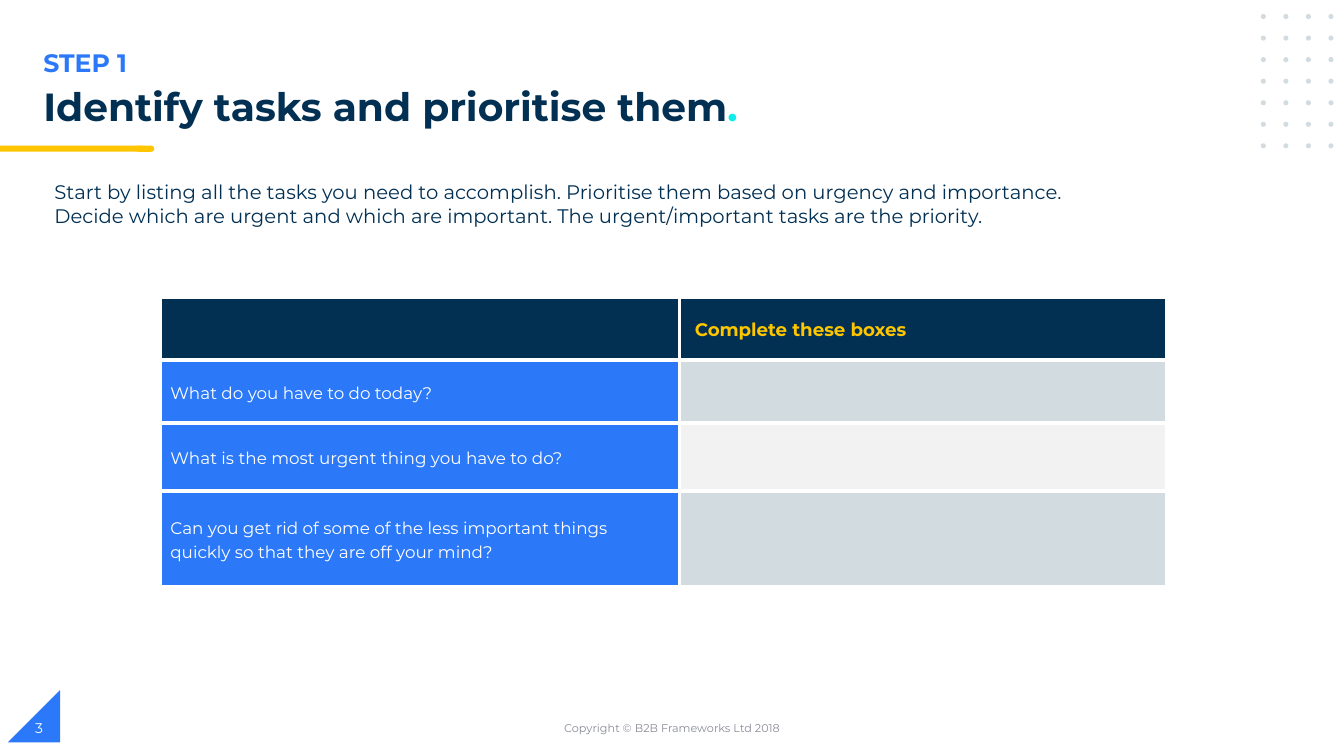
from itertools import product

from lxml import etree
from pptx import Presentation
from pptx import util as u
from pptx.dml.color import RGBColor
from pptx.enum import shapes, text
from pptx.oxml import ns

HUES = {
    "navy": "023053", "blue": "2B79F8", "gold": "FFC600", "cyan": "0EECEC",
    "mist": "D1DBE0", "pale": "F2F2F2", "gray": "888C97", "white": "FFFFFF",
}
KIND = shapes.MSO_SHAPE
TOP, MID = text.MSO_ANCHOR.TOP, text.MSO_ANCHOR.MIDDLE
LEFT, MIDST = text.PP_ALIGN.LEFT, text.PP_ALIGN.CENTER


def hue(name):
    return RGBColor.from_string(HUES[name])


class Page:
    """Holds the slide and its style; all lengths are in points."""

    face = "Montserrat"

    def __init__(self, slide):
        self.slide = slide

    def shape(self, kind, x, y, w, h, fill):
        item = self.slide.shapes.add_shape(kind, *map(u.Pt, (x, y, w, h)))
        item.shadow.inherit = False
        item.fill.solid()
        item.fill.fore_color.rgb = hue(fill)
        item.line.fill.background()
        return item

    def words(self, frame, runs, size, bold=False, align=LEFT, space=None):
        """Fill the first paragraph with (words, colour) runs."""
        para = frame.paragraphs[0]
        para.alignment = align
        if space:
            para.line_spacing = space
        for words, color in runs:
            run = para.add_run()
            run.text = words
            run.font.name = self.face
            run.font.size = u.Pt(size)
            run.font.bold = bold
            run.font.color.rgb = hue(color)

    def setup(self, frame, anchor):
        frame.word_wrap = True
        frame.auto_size = text.MSO_AUTO_SIZE.NONE
        frame.vertical_anchor = anchor

    def label(self, x, y, w, h, words, size, color, bold=False,
              align=LEFT, anchor=TOP):
        box = self.slide.shapes.add_textbox(*map(u.Pt, (x, y, w, h)))
        self.setup(box.text_frame, anchor)
        self.words(box.text_frame, [(words, color)], size, bold, align)

    def title(self, x, y, w, h, runs, size):
        item = self.slide.shapes.title
        item.left, item.top, item.width, item.height = map(u.Pt, (x, y, w, h))
        self.setup(item.text_frame, TOP)
        self.words(item.text_frame, runs, size, True, space=0.9)

    def border(self, cell, color, width):
        props = cell._tc.get_or_add_tcPr()
        for side in ("lnL", "lnR", "lnT", "lnB"):
            line = etree.SubElement(props, ns.qn("a:" + side), w=str(u.Pt(width)))
            fill = etree.SubElement(line, ns.qn("a:solidFill"))
            etree.SubElement(fill, ns.qn("a:srgbClr"), val=HUES[color])

    def cell(self, cell, fill, words="", color="white", size=12,
             bold=False, inset=7.2):
        self.border(cell, "white", 3)
        cell.fill.solid()
        cell.fill.fore_color.rgb = hue(fill)
        cell.vertical_anchor = MID
        cell.margin_left, cell.margin_right = u.Pt(inset), u.Pt(7.2)
        cell.margin_top = cell.margin_bottom = 0
        if words:
            self.words(cell.text_frame, [(words, color)], size, bold, space=1.15)

    def table(self, x, y, cols, rows):
        frame = self.slide.shapes.add_table(
            len(rows), len(cols), *map(u.Pt, (x, y, sum(cols), sum(rows))))
        grid = frame.table
        for col, width in zip(grid.columns, cols):
            col.width = u.Pt(width)
        for row, height in zip(grid.rows, rows):
            row.height = u.Pt(height)
        return grid


def main():
    deck = Presentation()
    deck.slide_width, deck.slide_height = u.Pt(960), u.Pt(540)
    page = Page(deck.slides.add_slide(deck.slide_layouts[5]))

    corner = page.shape(KIND.RIGHT_TRIANGLE, 5.6, 493, 37.3, 37.3, "blue")
    corner._element.spPr.xfrm.set("flipH", "1")
    page.shape(KIND.FLOWCHART_TERMINATOR, 96.5, 104, 13.7, 4.4, "gold")
    page.shape(KIND.RECTANGLE, 0, 104, 101.5, 4.4, "gold")
    for row, col in product(range(7), range(4)):
        page.shape(KIND.OVAL, 900.6 + 16.1 * col, 10 + 15.4 * row, 3.6, 3.6, "mist")

    page.label(23.8, 30.2, 481.7, 28.8, "STEP 1", 18, "blue", bold=True)
    page.title(23.8, 59, 808.6, 28.8,
               [("Identify tasks and prioritise them", "navy"), (".", "cyan")], 28)
    page.label(31.7, 125.3, 752.4, 41,
               "Start by listing all the tasks you need to accomplish. "
               "Prioritise them based on urgency and importance. "
               "Decide which are urgent and which are important. "
               "The urgent/important tasks are the priority.", 14, "navy")

    asks = [
        ("What do you have to do today?", "mist"),
        ("What is the most urgent thing you have to do?", "pale"),
        ("Can you get rid of some of the less important things quickly "
         "so that they are off your mind?", "mist"),
    ]
    grid = page.table(114.5, 212, (370.8, 348.5), (45.2, 45.2, 48.2, 68.4))
    page.cell(grid.cell(0, 0), "navy")
    page.cell(grid.cell(0, 1), "navy", "Complete these boxes", "gold", 13, True, 11)
    for row, (ask, tint) in enumerate(asks, 1):
        page.cell(grid.cell(row, 0), "blue", ask)
        page.cell(grid.cell(row, 1), tint)

    page.label(318.2, 505.4, 324, 28.8, "Copyright © B2B Frameworks Ltd 2018",
               8, "gray", align=MIDST, anchor=MID)
    page.label(18, 505.4, 216, 28.8, "3", 10, "white", anchor=MID)
    deck.save("out.pptx")


if __name__ == "__main__":
    main()
